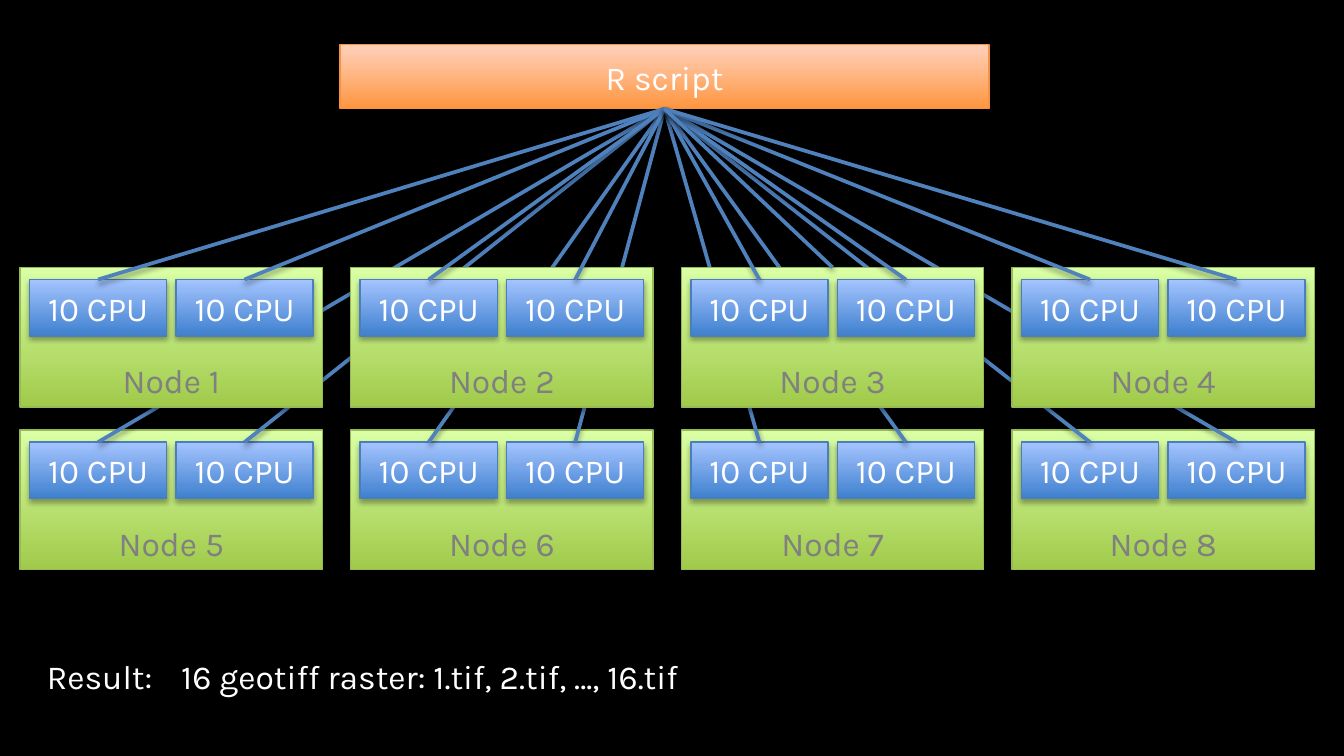
import pptx
import pptx.util
import pptx.dml.color
import pptx.enum.shapes
import pptx.enum.text
import lxml.etree

SLIDE_W = 10
SLIDE_H = SLIDE_W * 9 / 16
COLS, COL_STEP, ROW_STEP = 4, 2.46, 1.21
GRID_LEFT, GRID_TOP = 0.15, 1.99
NODE_W, NODE_H = 2.25, 1.04
CPU_GAP, CPU_TOP, CPU_H = 0.07, 0.09, 0.42

MIDDLE = pptx.enum.text.MSO_ANCHOR.MIDDLE
BOTTOM = pptx.enum.text.MSO_ANCHOR.BOTTOM
STYLES = {
    "script": {"stops": ("FF953E", "FFD2BD"), "line": "F69240", "text": "FFFFFF", "anchor": MIDDLE},
    "node": {"stops": ("A0CA4A", "DAFFA5"), "line": "98B955", "text": "808080", "anchor": BOTTOM},
    "cpu": {"stops": ("3F80CE", "A4C4FF"), "line": "4B7EBC", "text": "FFFFFF", "anchor": MIDDLE},
}
A = "{http://schemas.openxmlformats.org/drawingml/2006/main}"


def rgb(value):
    """Turn a hex string into a colour."""
    return pptx.dml.color.RGBColor.from_string(value)


def inches(box):
    """Turn a box of left, top, width and height into lengths."""
    return [pptx.util.Inches(v) for v in box]


def set_attrs(obj, values):
    """Set every attribute named in a dict of format values."""
    for name, value in values.items():
        setattr(obj, name, value)


def set_line(s, color, width):
    """Give an outline or connector its colour and width."""
    s.line.color.rgb = rgb(color)
    s.line.width = pptx.util.Pt(width)


def add_shadow(s, alpha, dist):
    """Give a shape or connector a soft shadow straight below it."""
    effects = lxml.etree.SubElement(s._element.spPr, A + "effectLst")
    shadow = lxml.etree.SubElement(
        effects, A + "outerShdw", blurRad=str(pptx.util.Pt(3.1)),
        dist=str(pptx.util.Pt(dist)), dir="5400000", rotWithShape="0")
    color = lxml.etree.SubElement(shadow, A + "srgbClr", val="000000")
    lxml.etree.SubElement(color, A + "alpha", val=str(alpha * 1000))


def write(tf, text, color):
    """Write one line of text and return its paragraph."""
    p = tf.paragraphs[0]
    r = p.add_run()
    r.text = text
    set_attrs(r.font, {"name": "Karla", "size": pptx.util.Pt(18)})
    r.font.color.rgb = rgb(color)
    return p


def add_block(slide, box, text, kind):
    """Draw a labelled gradient rectangle in the given style."""
    style = STYLES[kind]
    s = slide.shapes.add_shape(pptx.enum.shapes.MSO_SHAPE.RECTANGLE, *inches(box))
    s.fill.gradient()
    s.fill.gradient_angle = 90
    for stop, color in zip(s.fill.gradient_stops, style["stops"]):
        stop.color.rgb = rgb(color)
    set_line(s, style["line"], 0.75)
    add_shadow(s, 35, 1.8)
    s.text_frame.vertical_anchor = style["anchor"]
    p = write(s.text_frame, text, style["text"])
    p.alignment = pptx.enum.text.PP_ALIGN.CENTER
    return s


def add_link(slide, script, target):
    """Join the bottom of the script to the top of a target."""
    s = slide.shapes.add_connector(pptx.enum.shapes.MSO_CONNECTOR.STRAIGHT, 0, 0, 0, 0)
    s.begin_connect(script, 2)
    s.end_connect(target, 0)
    set_line(s, "4F81BD", 2)
    add_shadow(s, 38, 1.6)


def add_cpus(slide, box):
    """Place two equal CPU blocks side by side in a node's box."""
    left, top, width, _ = box
    cpu_w = (width - 3 * CPU_GAP) / 2
    lefts = [left + CPU_GAP + i * (cpu_w + CPU_GAP) for i in range(2)]
    return [add_block(slide, (x, top + CPU_TOP, cpu_w, CPU_H), "10 CPU", "cpu")
            for x in lefts]


def add_node_row(slide, box, first, script):
    """Draw a row of nodes with linked CPUs and return the nodes."""
    left, top, width, height = box
    boxes = [(left + i * COL_STEP, top, width, height) for i in range(COLS)]
    nodes = [add_block(slide, b, f"Node {first + i}", "node")
             for i, b in enumerate(boxes)]
    for b in boxes:
        for cpu in add_cpus(slide, b):
            add_link(slide, script, cpu)
    return nodes


def add_result(slide, box):
    """Write the result line."""
    tf = slide.shapes.add_textbox(*inches(box)).text_frame
    set_attrs(tf, {"word_wrap": False,
                   "auto_size": pptx.enum.text.MSO_AUTO_SIZE.SHAPE_TO_FIT_TEXT})
    write(tf, "Result:\t16 geotiff raster: 1.tif, 2.tif, …, 16.tif", "FFFFFF")


def main():
    """Build and save the slide."""
    prs = pptx.Presentation()
    set_attrs(prs, {"slide_width": pptx.util.Inches(SLIDE_W),
                    "slide_height": pptx.util.Inches(SLIDE_H)})
    slide = prs.slides.add_slide(prs.slide_layouts[6])
    slide.background.fill.solid()
    slide.background.fill.fore_color.rgb = rgb("000000")
    script = add_block(slide, (2.53, 0.33, 4.83, 0.48), "R script", "script")
    for row in (1, 0):
        box = (GRID_LEFT, GRID_TOP + row * ROW_STEP, NODE_W, NODE_H)
        nodes = add_node_row(slide, box, row * COLS + 1, script)
    add_link(slide, script, nodes[2])
    add_result(slide, (0.25, 4.83, 5.52, 0.4))
    prs.save("out.pptx")


if __name__ == "__main__":
    main()
